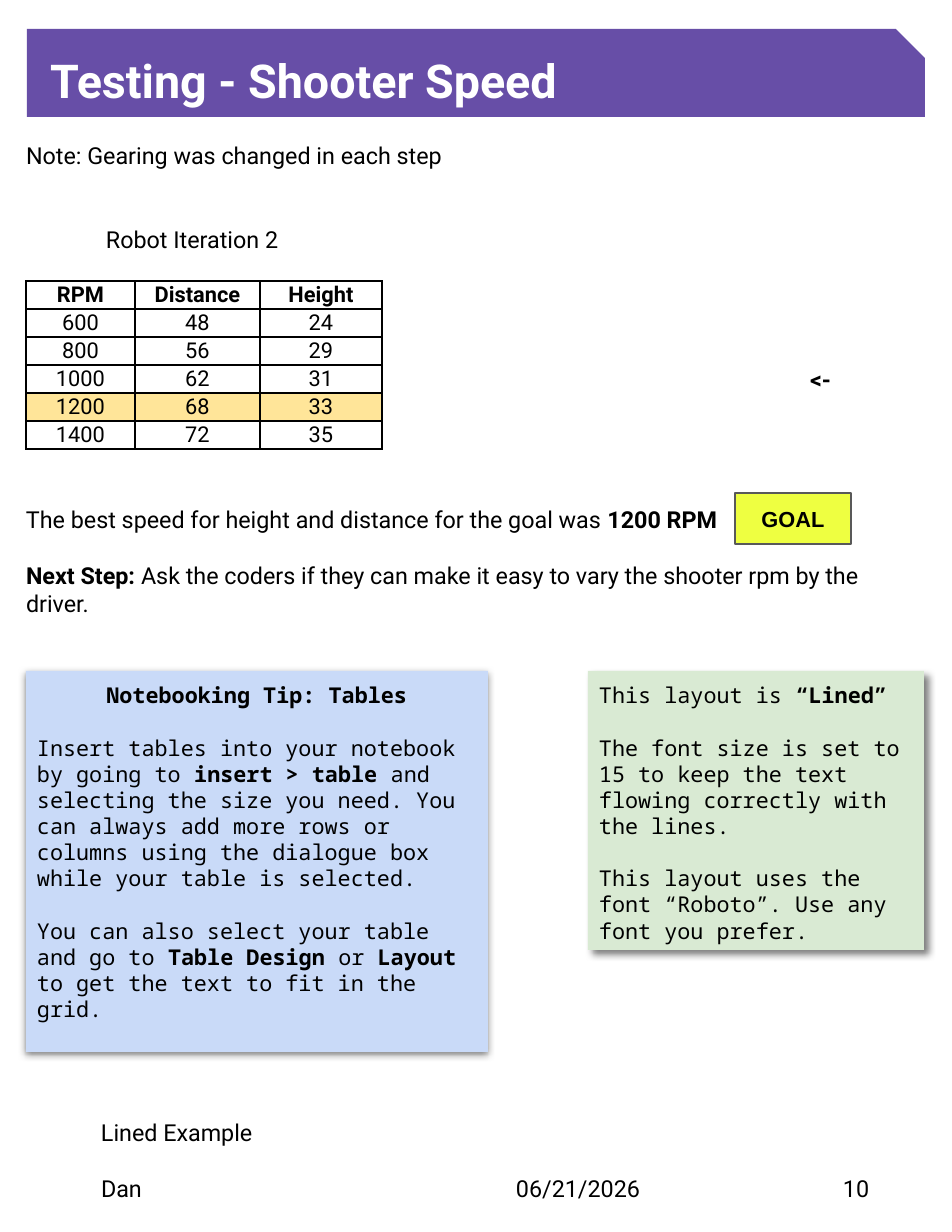
"""Build the shooter speed testing page of an engineering notebook."""
from lxml import etree
from pptx import Presentation
from pptx.dml.color import RGBColor
from pptx.enum.shapes import MSO_SHAPE
from pptx.enum.text import MSO_ANCHOR, PP_ALIGN
from pptx.oxml import parse_xml
from pptx.oxml.ns import nsdecls, qn
from pptx.util import Pt

PX = 914400 / 112
LEFT, CENTER = PP_ALIGN.LEFT, PP_ALIGN.CENTER
TOP, MIDDLE = MSO_ANCHOR.TOP, MSO_ANCHOR.MIDDLE
RECTANGLE, SNIPPED = MSO_SHAPE.RECTANGLE, MSO_SHAPE.SNIP_1_RECTANGLE
BLACK = RGBColor(0x00, 0x00, 0x00)
WHITE = RGBColor(0xFF, 0xFF, 0xFF)
PURPLE = RGBColor(0x67, 0x4E, 0xA7)
BLUE = RGBColor(0xC9, 0xDA, 0xF8)
GREEN = RGBColor(0xD9, 0xEA, 0xD3)
YELLOW = RGBColor(0xEE, 0xFF, 0x41)
AMBER = RGBColor(0xFF, 0xE5, 0x99)
GRAY = RGBColor(0x59, 0x59, 0x59)


def write(frame, text, font="Roboto", size=15, color=BLACK, align=LEFT,
          anchor=TOP, margins=(0, 0, 0, 0), line=None, gap=0):
    frame.word_wrap = True
    frame.vertical_anchor = anchor
    (frame.margin_left, frame.margin_top,
     frame.margin_right, frame.margin_bottom) = [round(m * PX) for m in margins]
    for index, content in enumerate(text.split("\n")):
        paragraph = frame.add_paragraph() if index else frame.paragraphs[0]
        paragraph.alignment = LEFT if index else align
        if line:
            paragraph.line_spacing = Pt(line)
        if index:
            paragraph.space_before = Pt(gap)
        for part, words in enumerate(content.split("**")):
            if words:
                run = paragraph.add_run()
                run.text = words
                run.font.name = font
                run.font.size = Pt(size)
                run.font.bold = part % 2 == 1
                run.font.color.rgb = color


def add_box(preset, bounds, fill):
    shape = slide.shapes.add_shape(preset, *[round(b * PX) for b in bounds])
    shape.shadow.inherit = False
    shape.fill.solid()
    shape.fill.fore_color.rgb = fill
    shape.line.fill.background()
    return shape


presentation = Presentation()
presentation.slide_width = round(952 * PX)
presentation.slide_height = round(1232 * PX)
slide = presentation.slides.add_slide(presentation.slide_layouts[6])

labels = [
    (101, 1174, 393, 26, "Dan"),
    (516, 1174, 269, 26, "06/21/2026"),
    (843, 1174, 83, 26, "10"),
    (101, 1118, 822, 26, "Lined Example"),
    (26, 141, 898, 28, "Note: Gearing was changed in each step"),
    (106, 225, 300, 28, "Robot Iteration 2"),
    (810, 365, 60, 28, "**<-**"),
    (26, 505, 705, 28,
     "The best speed for height and distance for the goal was **1200 RPM**"),
    (26, 561, 880, 56,
     "**Next Step:** Ask the coders if they can make it easy to vary "
     "the shooter rpm by the driver."),
]
for *bounds, text in labels:
    label = slide.shapes.add_textbox(*[round(b * PX) for b in bounds])
    write(label.text_frame, text, line=18)

banner = add_box(SNIPPED, (27, 29, 898, 88), PURPLE)
banner.adjustments[0] = 0.33
write(banner.text_frame, "**Testing - Shooter Speed**", size=30, color=WHITE,
      anchor=MIDDLE, margins=(23, 0, 11, 0))

goal = add_box(RECTANGLE, (735, 493, 116, 51), YELLOW)
goal.line.color.rgb = GRAY
goal.line.width = Pt(0.75)
write(goal.text_frame, "**GOAL**", font="Arial", size=14, align=CENTER,
      anchor=MIDDLE, margins=(11, 11, 11, 11))

notes = [
    ((26, 671, 462, 381), BLUE, CENTER, 1.5, 90,
     "**Notebooking Tip: Tables**\n"
     "Insert tables into your notebook by going to **insert > table** and "
     "selecting the size you need. You can always add more rows or columns "
     "using the dialogue box while your table is selected.\n"
     "You can also select your table and go to **Table Design** or **Layout** "
     "to get the text to fit in the grid."),
    ((588, 671, 336, 279), GREEN, LEFT, 3.8, 46,
     "This layout is **“Lined”**\n"
     "The font size is set to 15 to keep the text flowing correctly with "
     "the lines.\n"
     "This layout uses the font “Roboto”. Use any font you prefer."),
]
for bounds, fill, align, distance, angle, text in notes:
    note = add_box(RECTANGLE, bounds, fill)
    effects = note._element.spPr.find(qn("a:effectLst"))
    shadow = etree.SubElement(effects, qn("a:outerShdw"), blurRad=str(Pt(4.5)),
                              dist=str(Pt(distance)), dir=str(angle * 60000),
                              algn="bl", rotWithShape="0")
    shadow_color = etree.SubElement(shadow, qn("a:srgbClr"), val=str(BLACK))
    etree.SubElement(shadow_color, qn("a:alpha"), val="50000")
    write(note.text_frame, text, font="Noto Sans Mono", size=14, align=align,
          margins=(11, 11, 11, 11), line=16.8, gap=16.8)

readings = [
    ("RPM", "Distance", "Height"),
    (600, 48, 24),
    (800, 56, 29),
    (1000, 62, 31),
    (1200, 68, 33),
    (1400, 72, 35),
]
column_widths = (109, 125, 122)
ROW_HEIGHT = 28
SELECTED_ROW = 4
table = slide.shapes.add_table(
    len(readings), len(column_widths), round(26 * PX), round(281 * PX),
    round(sum(column_widths) * PX), round(len(readings) * ROW_HEIGHT * PX)).table
for column, width in zip(table.columns, column_widths):
    column.width = round(width * PX)
for row_index, reading in enumerate(readings):
    table.rows[row_index].height = round(ROW_HEIGHT * PX)
    for column_index, value in enumerate(reading):
        cell = table.cell(row_index, column_index)
        write(cell.text_frame, str(value) if row_index else f"**{value}**",
              size=14, align=CENTER)
        cell.vertical_anchor = MIDDLE
        cell.margin_left = cell.margin_right = round(11 * PX)
        cell.margin_top = cell.margin_bottom = 0
        properties = cell._tc.get_or_add_tcPr()
        for side in ("lnL", "lnR", "lnT", "lnB"):
            properties.append(parse_xml(
                f'<a:{side} {nsdecls("a")} w="{Pt(1.5)}"><a:solidFill>'
                f'<a:srgbClr val="{BLACK}"/></a:solidFill></a:{side}>'))
        if row_index == SELECTED_ROW:
            cell.fill.solid()
            cell.fill.fore_color.rgb = AMBER
        else:
            cell.fill.background()

presentation.save("out.pptx")
